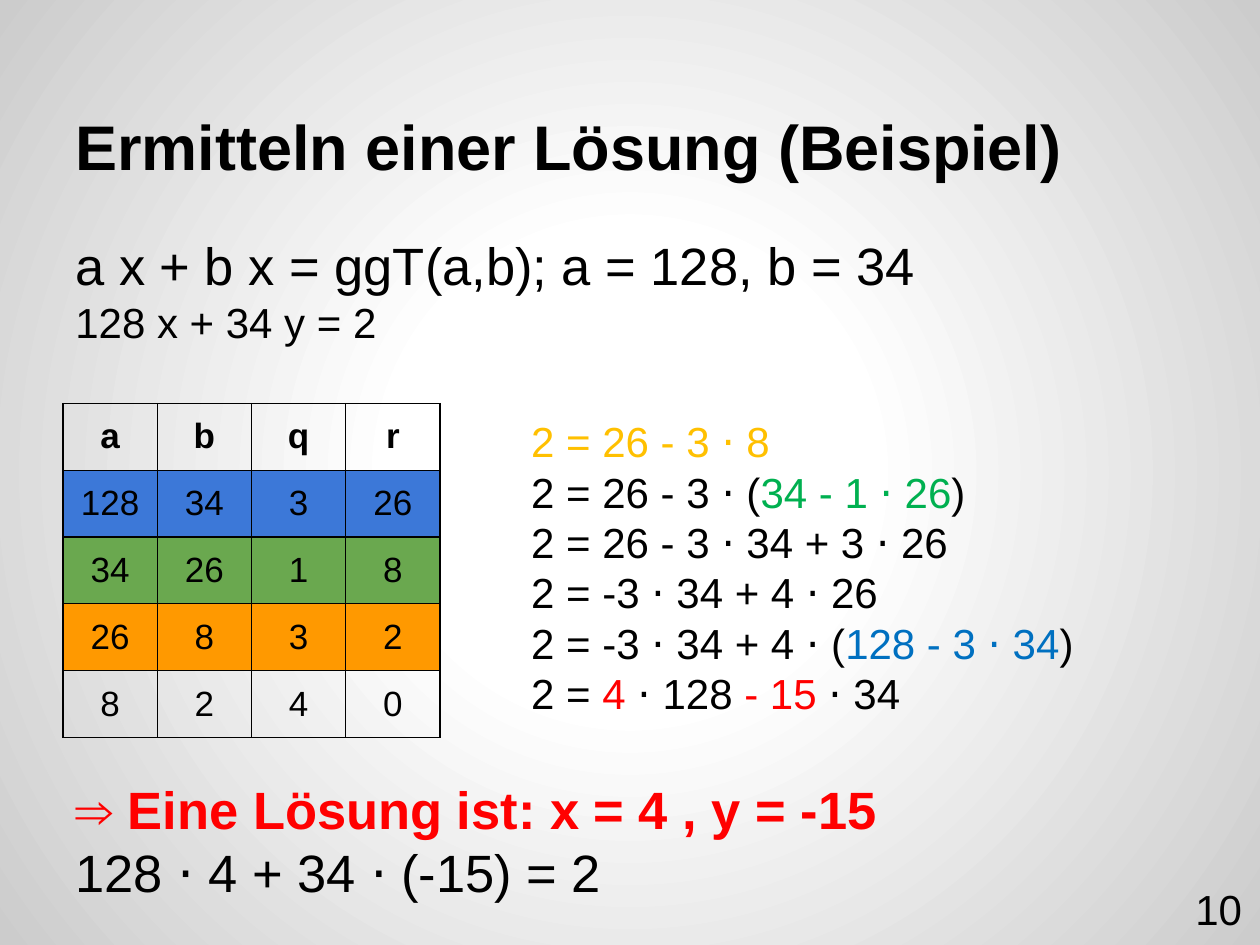
"""Builds a slide on solving a linear Diophantine equation with the Euclidean algorithm."""
from dataclasses import dataclass

from pptx import Presentation
from pptx.dml.color import RGBColor
from pptx.enum.text import MSO_ANCHOR, PP_ALIGN
from pptx.oxml import parse_xml
from pptx.oxml.ns import nsdecls
from pptx.util import Cm, Pt

TOP, MIDDLE, BOTTOM = MSO_ANCHOR.TOP, MSO_ANCHOR.MIDDLE, MSO_ANCHOR.BOTTOM
LEFT, CENTER, RIGHT = PP_ALIGN.LEFT, PP_ALIGN.CENTER, PP_ALIGN.RIGHT
INSET = Cm(0.25)


@dataclass(frozen=True)
class Theme:
    font: str = "Arial"
    title: int = 36
    large: int = 30
    body: int = 24
    cell: int = 20
    text: str = "000000"
    result: str = "FF0000"
    amber: str = "FFC000"
    green: str = "00B050"
    blue: str = "0070C0"
    row_blue: str = "3C78D8"
    row_green: str = "6AA84F"
    row_orange: str = "FF9900"
    bg_stops: tuple = ((0, "FFFFFF"), (30, "FFFFFF"), (100, "CCCCCC"))


T = Theme()


def add_run(p, text, size=T.body, color=T.text, bold=False):
    r = p.add_run()
    r.text = text
    r.font.name = T.font
    r.font.size = Pt(size)
    r.font.bold = bold
    r.font.color.rgb = RGBColor.from_string(color)


class Deck:
    def __init__(self, prs, theme):
        self.theme = theme
        self.s = prs.slides.add_slide(prs.slide_layouts[6])

    def background(self):
        fill = self.s.background.fill
        fill.solid()
        solid = self.s.element.xpath("./p:cSld/p:bg/p:bgPr/a:solidFill")[0]
        stops = "".join(
            f'<a:gs pos="{pos * 1000}"><a:srgbClr val="{color}"/></a:gs>'
            for pos, color in self.theme.bg_stops)
        grad = parse_xml(
            f'<a:gradFill {nsdecls("a")}><a:gsLst>{stops}</a:gsLst><a:path path="circle">'
            '<a:fillToRect l="50000" t="50000" r="50000" b="50000"/></a:path></a:gradFill>')
        solid.getparent().replace(solid, grad)

    def text(self, x, y, w, h, lines, anchor=TOP, align=LEFT):
        sp = self.s.shapes.add_textbox(Cm(x), Cm(y), Cm(w), Cm(h))
        tf = sp.text_frame
        tf.word_wrap = True
        tf.vertical_anchor = anchor
        tf.margin_left = tf.margin_right = tf.margin_top = tf.margin_bottom = INSET
        for i, line in enumerate(lines):
            p = tf.add_paragraph() if i else tf.paragraphs[0]
            p.alignment = align
            for text, style in line:
                add_run(p, text, **style)

    def table(self, x, y, col_w, row_h, rows, fills):
        n_rows, n_cols = len(rows), len(rows[0])
        table = self.s.shapes.add_table(
            n_rows, n_cols, Cm(x), Cm(y), Cm(col_w * n_cols), Cm(row_h * n_rows)).table
        table.first_row = table.horz_banding = False
        for col in table.columns:
            col.width = Cm(col_w)
        for i, values in enumerate(rows):
            table.rows[i].height = Cm(row_h)
            for j, value in enumerate(values):
                self.cell(table.cell(i, j), value, fills[i], bold=i == 0)

    def cell(self, cell, value, fill, bold):
        cell.margin_left = cell.margin_right = cell.margin_top = cell.margin_bottom = INSET
        cell.vertical_anchor = MIDDLE
        p = cell.text_frame.paragraphs[0]
        p.alignment = CENTER
        add_run(p, value, size=self.theme.cell, bold=bold)
        pr = cell._tc.get_or_add_tcPr()
        for side in ("lnL", "lnR", "lnT", "lnB"):
            pr.append(parse_xml(
                f'<a:{side} {nsdecls("a")} w="{Pt(0.75)}"><a:solidFill>'
                f'<a:srgbClr val="{self.theme.text}"/></a:solidFill></a:{side}>'))
        if fill:
            cell.fill.solid()
            cell.fill.fore_color.rgb = RGBColor.from_string(fill)
        else:
            cell.fill.background()


def main():
    prs = Presentation()
    prs.slide_width, prs.slide_height = Cm(25.4), Cm(19.05)
    deck = Deck(prs, T)
    deck.background()

    plain, red = {}, {"color": T.result}
    large = {"size": T.large}
    margin, width, middle = 1.27, 22.86, 8.13

    deck.text(margin, 0.76, width, 3.18,
              [[("Ermitteln einer Lösung (Beispiel)", {"size": T.title, "bold": True})]],
              anchor=BOTTOM)
    deck.text(margin, 4.45, width, 3.05, [
        [("a x + b x = ggT(a,b); a = 128, b = 34", large)],
        [("128 x + 34 y = 2", plain)],
    ])
    deck.table(margin, middle, 1.9, 1.29,
               ["abqr", ("128", "34", "3", "26"), ("34", "26", "1", "8"),
                ("26", "8", "3", "2"), "8240"],
               [None, T.row_blue, T.row_green, T.row_orange, None])
    deck.text(10.46, middle, 13.67, 6.78, [
        [("2 = 26 - 3 ⋅ 8", {"color": T.amber})],
        [("2 = 26 - 3 ⋅ (", plain), ("34 - 1 ⋅ 26", {"color": T.green}), (")", plain)],
        [("2 = 26 - 3 ⋅ 34 + 3 ⋅ 26", plain)],
        [("2 = -3 ⋅ 34 + 4 ⋅ 26", plain)],
        [("2 = -3 ⋅ 34 + 4 ⋅ (", plain), ("128 - 3 ⋅ 34", {"color": T.blue}), (")", plain)],
        [("2 = ", plain), ("4", red), (" ⋅ 128 ", plain), ("- 15", red), (" ⋅ 34", plain)],
    ])
    deck.text(margin, 15.42, width, 3.18, [
        [("⇒ Eine Lösung ist: x = 4 , y = -15", {**large, **red, "bold": True})],
        [("128 ⋅ 4 + 34 ⋅ (-15) = 2", large)],
    ])
    deck.text(23.77, 17.6, 1.52, 1.45, [[("10", plain)]], anchor=MIDDLE, align=RIGHT)
    prs.save("out.pptx")


if __name__ == "__main__":
    main()
